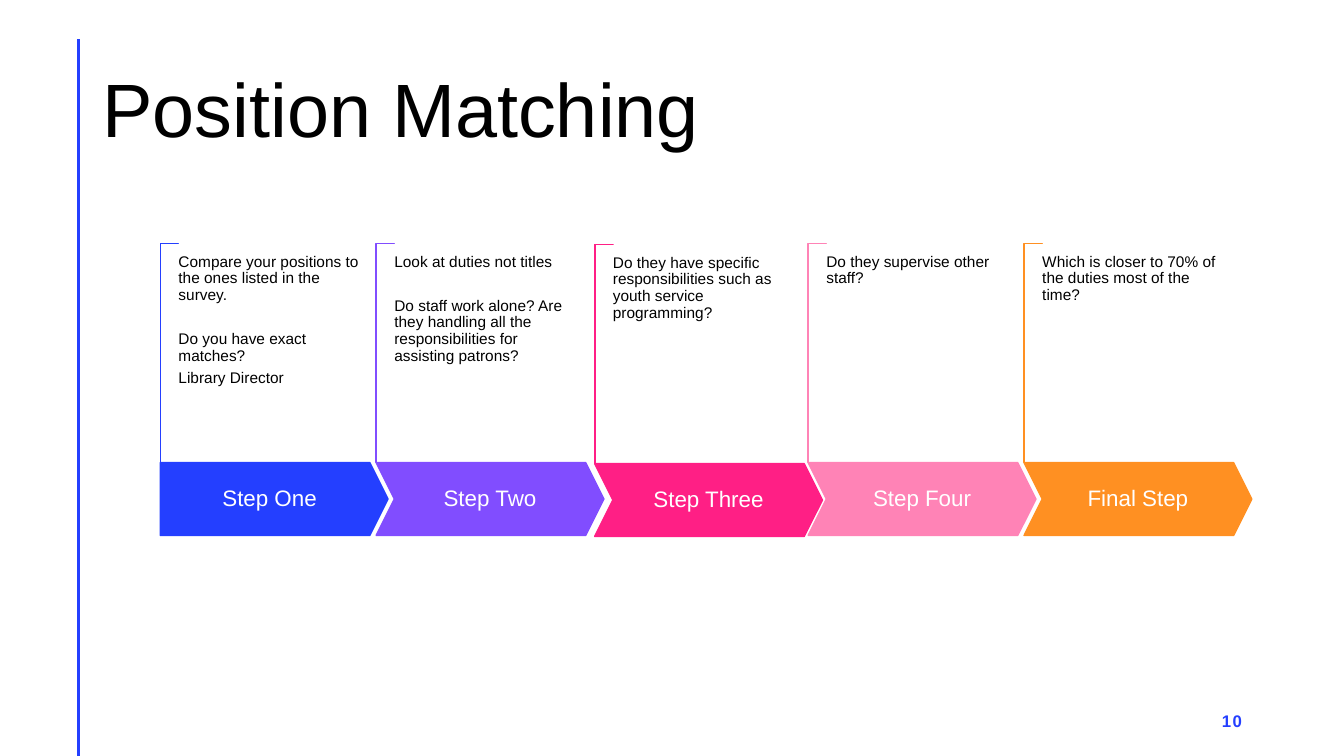
"""Build the Position Matching slide with its five step arrows."""
from pptx import Presentation
from pptx.dml.color import RGBColor
from pptx.enum.shapes import MSO_CONNECTOR as LINK, MSO_SHAPE as SHAPE
from pptx.enum.text import MSO_ANCHOR as ANCHOR, PP_ALIGN as ALIGN
from pptx.oxml.ns import qn
from pptx.util import Pt
from lxml.etree import SubElement


def tint(code):
    return RGBColor.from_string(code)


def write(frame, texts, size, color, align=ALIGN.LEFT, anchor=ANCHOR.MIDDLE,
          pad=(7.2, 3.6), after=0, gap=0, space=0.9):
    frame.word_wrap = True
    frame.vertical_anchor = anchor
    frame.margin_left = frame.margin_right = Pt(pad[0])
    frame.margin_top = frame.margin_bottom = Pt(pad[1])
    for i, text in enumerate(texts):
        para = frame.add_paragraph() if i else frame.paragraphs[0]
        para.alignment = align
        para.line_spacing = space
        para.space_after = Pt(gap if gap and i == 0 else after)
        run = para.add_run()
        run.text = text
        run.font.name = "Arial"
        run.font.size = Pt(size)
        run.font.color.rgb = tint(color)
    return run


deck = Presentation()
deck.slide_width, deck.slide_height = Pt(960), Pt(540)
slide = deck.slides.add_slide(deck.slide_layouts[6])
shapes = slide.shapes

rule = shapes.add_connector(LINK.STRAIGHT, Pt(56.2), Pt(28), Pt(56.2), Pt(540))
rule.line.color.rgb = tint("243FFF")
rule.line.width = Pt(2)
SubElement(rule._element.spPr, qn("a:effectLst"))

title = shapes.add_textbox(Pt(66.2), Pt(28.8), Pt(828), Pt(104.4))
write(title.text_frame, ["Position Matching"], 54, "000000")

page = shapes.add_textbox(Pt(678.2), Pt(500.4), Pt(216), Pt(28.8))
num = write(page.text_frame, ["10"], 12, "243FFF", ALIGN.RIGHT, after=6, space=1)
num.font.bold = True
num.font._element.set("spc", "100")

steps = [
    ("Step One", "243FFF", 114.5, 0,
     ["Compare your positions to the ones listed in the survey.",
      "Do you have exact matches?", "Library Director"]),
    ("Step Two", "814DFF", 268.7, 0,
     ["Look at duties not titles",
      "Do staff work alone? Are they handling all the responsibilities "
      "for assisting patrons?"]),
    ("Step Three", "FF1F85", 424.8, 0.7,
     ["Do they have specific responsibilities such as youth service programming?"]),
    ("Step Four", "FF83B6", 577.3, 0, ["Do they supervise other staff?"]),
    ("Final Step", "FF9022", 731.5, 0,
     ["Which is closer to 70% of the duties most of the time?"]),
]
tall, thin = 156.2, 13

for i, (name, color, left, drop, notes) in enumerate(steps):
    edge = shapes.add_shape(SHAPE.CORNER, Pt(left + (thin - tall) / 2),
                            Pt(174 + drop + (tall - thin) / 2), Pt(tall), Pt(thin))
    edge.rotation = 90
    edge.adjustments[0] = edge.adjustments[1] = 0.01

    kind = SHAPE.CHEVRON if i else SHAPE.PENTAGON
    arrow = shapes.add_shape(kind, Pt(left), Pt(330.5 + drop), Pt(162.7), Pt(52))
    arrow.adjustments[0] = 0.25
    write(arrow.text_frame, [name], 16, "FFFFFF", ALIGN.CENTER)

    for part, fill in ((edge, "FFFFFF"), (arrow, color)):
        part.shadow.inherit = False
        part.fill.solid()
        part.fill.fore_color.rgb = tint(fill)
        part.line.color.rgb = tint(color)
        part.line.width = Pt(1)

    note = shapes.add_textbox(Pt(left + thin), Pt(181.4 + drop), Pt(131.8), Pt(111.6))
    write(note.text_frame, notes, 11, "000000", anchor=ANCHOR.TOP,
          pad=(0, 0), after=4, gap=19.5)

deck.save("out.pptx")
